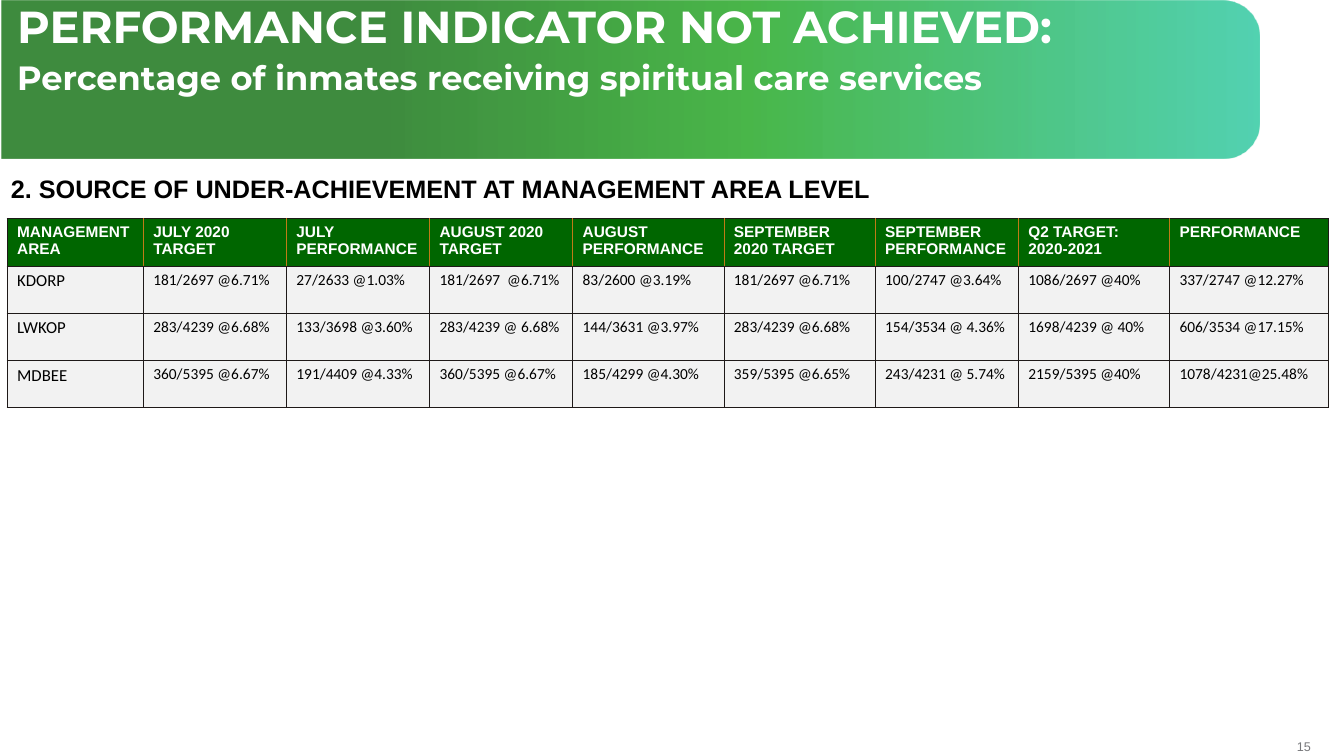
from dataclasses import dataclass

from lxml.etree import SubElement
from pptx import Presentation
from pptx.dml.color import RGBColor
from pptx.enum.shapes import MSO_SHAPE as Shape
from pptx.enum.text import MSO_ANCHOR as Anchor, MSO_AUTO_SIZE as Fit, PP_ALIGN as Align
from pptx.oxml import parse_xml
from pptx.oxml.ns import nsdecls, qn
from pptx.util import Inches, Pt


@dataclass(frozen=True)
class Font:
    name: str
    size: int
    color: str
    bold: bool = False


@dataclass(frozen=True)
class Theme:
    title: Font = Font("Montserrat", 32, "FFFFFF", True)
    sub: Font = Font("Montserrat", 24, "FFFFFF", True)
    head: Font = Font("Arial", 18, "000000", True)
    label: Font = Font("Arial", 11, "FFFFFF", True)
    area: Font = Font("Calibri", 12, "000000")
    value: Font = Font("Calibri", 11, "000000")
    page: Font = Font("Arial", 9, "77787B")
    green: str = "006600"
    gray: str = "F2F2F2"
    dark: str = "1E1918"
    amber: str = "BF7B17"
    # Position, colour and opacity, all but the colour in percent
    fade: tuple = ((30, "006600", 75), (59, "009900", 71), (100, "00BC8D", 67))


@dataclass(frozen=True)
class Box:
    left: float
    top: float
    width: float
    height: float

    def place(self) -> tuple:
        return tuple(map(Inches, (self.left, self.top, self.width, self.height)))


@dataclass(frozen=True)
class Column:
    width: float
    label: str
    cells: tuple


THEME = Theme()
AREAS = Column(1.35, "MANAGEMENT AREA", ("KDORP", "LWKOP", "MDBEE"))
COLUMNS = (
    AREAS,
    Column(1.42, "JULY 2020\vTARGET", ("181/2697 @6.71%", "283/4239 @6.68%", "360/5395 @6.67%")),
    Column(1.42, "JULY PERFORMANCE", ("27/2633 @1.03%", "133/3698 @3.60%", "191/4409 @4.33%")),
    Column(1.42, "AUGUST 2020\vTARGET", ("181/2697  @6.71%", "283/4239 @ 6.68%", "360/5395 @6.67%")),
    Column(1.5, "AUGUST PERFORMANCE", ("83/2600 @3.19%", "144/3631 @3.97%", "185/4299 @4.30%")),
    Column(1.5, "SEPTEMBER 2020 TARGET", ("181/2697 @6.71%", "283/4239 @6.68%", "359/5395 @6.65%")),
    Column(1.42, "SEPTEMBER PERFORMANCE", ("100/2747 @3.64%", "154/3534 @ 4.36%", "243/4231 @ 5.74%")),
    Column(1.5, "Q2 TARGET: 2020-2021", ("1086/2697 @40%", "1698/4239 @ 40%", "2159/5395 @40%")),
    Column(1.58, "PERFORMANCE", ("337/2747 @12.27%", "606/3534 @17.15%", "1078/4231@25.48%")),
)


def style(para, font: Font) -> None:
    for run in para.runs:
        run.font.name = font.name
        run.font.size = Pt(font.size)
        run.font.bold = font.bold
        run.font.color.rgb = RGBColor.from_string(font.color)


def add_text(slide, box: Box, text: str, font: Font):
    frame = slide.shapes.add_textbox(*box.place()).text_frame
    frame.word_wrap = True
    frame.text = text
    style(frame.paragraphs[0], font)
    return frame


def add_banner(slide, box: Box) -> None:
    shape = slide.shapes.add_shape(Shape.ROUND_2_SAME_RECTANGLE, *box.place())
    shape.rotation = 90
    shape.adjustments[0] = 0.233
    shape.shadow.inherit = False
    shape.line.fill.background()
    stops = "".join(
        f'<a:gs pos="{pos * 1000}"><a:srgbClr val="{color}">'
        f'<a:alpha val="{alpha * 1000}"/></a:srgbClr></a:gs>'
        for pos, color, alpha in THEME.fade)
    fill = parse_xml(
        f'<a:gradFill {nsdecls("a")} rotWithShape="1"><a:gsLst>{stops}</a:gsLst>'
        '<a:lin ang="16200000" scaled="0"/></a:gradFill>')
    shape._element.spPr.find(qn("a:prstGeom")).addnext(fill)
    # Behind the title
    slide.shapes._spTree.insert(2, shape._element)


def add_title(slide, box: Box, lines: tuple) -> None:
    title = slide.shapes.title
    title.left, title.top, title.width, title.height = box.place()
    frame = title.text_frame
    frame.text = "\n".join(lines)
    frame.word_wrap = True
    frame.auto_size = Fit.NONE
    frame.vertical_anchor = Anchor.TOP
    for para, font in zip(frame.paragraphs, (THEME.title, THEME.sub)):
        para.alignment = Align.LEFT
        para.line_spacing = 0.9
        style(para, font)
    frame.paragraphs[0].space_after = Pt(6)


def set_edges(cell, left: str, right: str) -> None:
    props = cell._tc.get_or_add_tcPr()
    edges = (("lnL", left), ("lnR", right), ("lnT", THEME.dark), ("lnB", THEME.dark))
    for spot, (tag, color) in enumerate(edges):
        line = SubElement(props, qn(f"a:{tag}"), w=str(Pt(0.5)))
        fill = SubElement(line, qn("a:solidFill"))
        SubElement(fill, qn("a:srgbClr"), val=color)
        props.insert(spot, line)


def add_grid(slide, box: Box) -> None:
    rows = len(AREAS.cells) + 1
    last = len(COLUMNS) - 1
    table = slide.shapes.add_table(rows, last + 1, *box.place()).table
    for row in table.rows:
        row.height = Inches(box.height / rows)
    for x, col in enumerate(COLUMNS):
        table.columns[x].width = Inches(col.width)
        for y, text in enumerate((col.label, *col.cells)):
            cell = table.cell(y, x)
            cell.text_frame.text = text
            font = THEME.label if y == 0 else THEME.area if x == 0 else THEME.value
            style(cell.text_frame.paragraphs[0], font)
            cell.fill.solid()
            cell.fill.fore_color.rgb = RGBColor.from_string(THEME.gray if y else THEME.green)
            inner = THEME.dark if y else THEME.amber
            set_edges(cell, inner if x else THEME.dark, inner if x < last else THEME.dark)


def main() -> None:
    deck = Presentation()
    deck.slide_width, deck.slide_height = Inches(13.33), Inches(7.5)
    slide = deck.slides.add_slide(deck.slide_layouts[5])

    # Banner and title
    add_banner(slide, Box(5.47, -5.45, 1.57, 12.48))
    add_title(slide, Box(0.07, 0, 11.98, 0.57), (
        "PERFORMANCE INDICATOR NOT ACHIEVED:",
        "Percentage of inmates receiving spiritual care services"))

    # Section heading and table
    add_text(slide, Box(0.01, 1.67, 9.66, 0.4),
             "2. SOURCE OF UNDER-ACHIEVEMENT AT MANAGEMENT AREA LEVEL", THEME.head)
    add_grid(slide, Box(0.07, 2.17, 13.11, 1.87))

    # Page number
    page = add_text(slide, Box(12.61, 7.33, 0.39, 0.15), "15", THEME.page)
    page.margin_left = page.margin_right = page.margin_top = page.margin_bottom = 0
    page.vertical_anchor = Anchor.MIDDLE
    page.paragraphs[0].alignment = Align.RIGHT

    deck.save("out.pptx")


if __name__ == "__main__":
    main()
